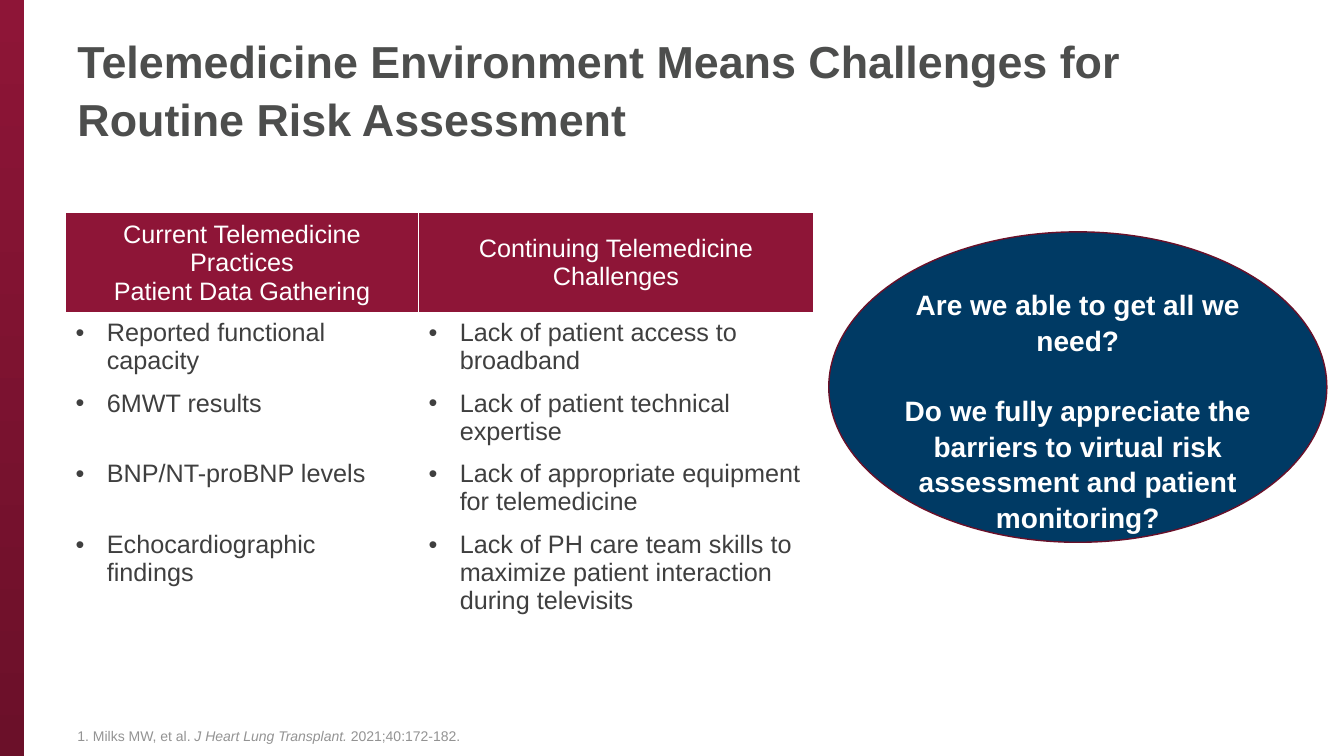
from dataclasses import dataclass

from lxml.etree import SubElement
from pptx import Presentation
from pptx.dml.color import RGBColor
from pptx.enum.shapes import MSO_SHAPE
from pptx.enum.text import MSO_ANCHOR, PP_ALIGN
from pptx.oxml.ns import qn
from pptx.util import Inches, Pt


@dataclass(frozen=True)
class Theme:
    font: str = "Arial"
    title_size: int = 32
    question_size: int = 20
    table_size: int = 18
    citation_size: int = 10
    line_spacing: float = 1.07
    maroon: str = "8E1537"
    dark_maroon: str = "6B1029"
    oval_line: str = "691029"
    navy: str = "003A64"
    white: str = "FFFFFF"
    title_gray: str = "4D4E4D"
    body_gray: str = "3F3F3F"
    citation_gray: str = "939393"


THEME = Theme()

TITLE = "Telemedicine Environment Means Challenges for Routine Risk Assessment"
HEADINGS = (
    "Current Telemedicine Practices\nPatient Data Gathering",
    "Continuing Telemedicine Challenges",
)
PRACTICES_AND_CHALLENGES = (
    ("Reported functional capacity", "Lack of patient access to broadband"),
    ("6MWT results", "Lack of patient technical expertise"),
    ("BNP/NT-proBNP levels", "Lack of appropriate equipment for telemedicine"),
    ("Echocardiographic findings",
     "Lack of PH care team skills to maximize patient interaction during televisits"),
)
COLUMN_WIDTHS = (3.5, 3.92)
ROW_HEIGHTS = (0.92, 0.66, 0.66, 0.66, 0.94)
QUESTIONS = (
    "Are we able to get all we need?\n"
    "Do we fully appreciate the barriers to virtual risk assessment and patient monitoring?"
)
CITATION = (
    ("1. Milks MW, et al.", False),
    (" J Heart Lung Transplant. ", True),
    ("2021;40:172-182.", False),
)


def rgb(color):
    return RGBColor.from_string(color)


def format_text(frame, size, color, bold=False, align=PP_ALIGN.LEFT, spacing=None):
    for paragraph in frame.paragraphs:
        paragraph.alignment = align
        paragraph.line_spacing = spacing
        for run in paragraph.runs:
            run.font.name = THEME.font
            run.font.size = Pt(size)
            run.font.bold = bold
            run.font.color.rgb = rgb(color)


def add_text_frame(slide, left, top, width, height, anchor):
    box = slide.shapes.add_textbox(
        Inches(left), Inches(top), Inches(width), Inches(height))
    frame = box.text_frame
    frame.word_wrap = True
    frame.vertical_anchor = anchor
    return frame


def add_side_band(slide):
    band = slide.shapes.add_shape(
        MSO_SHAPE.RECTANGLE, Inches(-0.01), 0, Inches(0.25), Inches(7.51))
    band.shadow.inherit = False
    band.line.fill.background()
    band.fill.gradient()
    band.fill.gradient_angle = 270
    for stop, color in zip(band.fill.gradient_stops, (THEME.maroon, THEME.dark_maroon)):
        stop.color.rgb = rgb(color)


def add_title(slide):
    frame = add_text_frame(slide, 0.67, 0.22, 11.75, 1.3, MSO_ANCHOR.MIDDLE)
    frame.text = TITLE
    format_text(frame, THEME.title_size, THEME.title_gray, bold=True,
                spacing=THEME.line_spacing)


def add_citation(slide):
    frame = add_text_frame(slide, 0.67, 6.95, 11.75, 0.48, MSO_ANCHOR.BOTTOM)
    for text, italic in CITATION:
        run = frame.paragraphs[0].add_run()
        run.text = text
        run.font.italic = italic
    format_text(frame, THEME.citation_size, THEME.citation_gray)


def set_borders(cell, bottom_width):
    properties = cell._tc.get_or_add_tcPr()
    for side, width in (("L", 1), ("R", 1), ("T", 1), ("B", bottom_width)):
        border = SubElement(properties, qn(f"a:ln{side}"), w=str(Pt(width)))
        fill = SubElement(border, qn("a:solidFill"))
        SubElement(fill, qn("a:srgbClr"), val=THEME.white)


def add_bullet(paragraph):
    properties = paragraph._p.get_or_add_pPr()
    indent = Inches(0.31)
    properties.set("marL", str(indent))
    properties.set("indent", str(-indent))
    SubElement(properties, qn("a:buFont"), typeface=THEME.font)
    SubElement(properties, qn("a:buChar"), char="•")


def fill_heading(cell, text):
    set_borders(cell, bottom_width=3)
    cell.fill.solid()
    cell.fill.fore_color.rgb = rgb(THEME.maroon)
    cell.vertical_anchor = MSO_ANCHOR.MIDDLE
    cell.text_frame.text = text
    format_text(cell.text_frame, THEME.table_size, THEME.white, align=PP_ALIGN.CENTER)


def fill_item(cell, text):
    set_borders(cell, bottom_width=1)
    cell.fill.background()
    cell.text_frame.text = text
    format_text(cell.text_frame, THEME.table_size, THEME.body_gray)
    add_bullet(cell.text_frame.paragraphs[0])


def add_practice_table(slide):
    table = slide.shapes.add_table(
        len(ROW_HEIGHTS), len(COLUMN_WIDTHS), Inches(0.65), Inches(2.11),
        Inches(sum(COLUMN_WIDTHS)), Inches(sum(ROW_HEIGHTS))).table
    table.horz_banding = False
    for column, width in zip(table.columns, COLUMN_WIDTHS):
        column.width = Inches(width)
    for row, height in zip(table.rows, ROW_HEIGHTS):
        row.height = Inches(height)
    for column, heading in enumerate(HEADINGS):
        fill_heading(table.cell(0, column), heading)
    for row, items in enumerate(PRACTICES_AND_CHALLENGES, start=1):
        for column, item in enumerate(items):
            fill_item(table.cell(row, column), item)


def add_question_oval(slide):
    oval = slide.shapes.add_shape(
        MSO_SHAPE.OVAL, Inches(8.22), Inches(2.3), Inches(4.94), Inches(3.08))
    oval.shadow.inherit = False
    oval.fill.solid()
    oval.fill.fore_color.rgb = rgb(THEME.navy)
    oval.line.color.rgb = rgb(THEME.oval_line)
    oval.line.width = Pt(1)

    frame = add_text_frame(slide, 8.62, 2.78, 4.14, 2.12, MSO_ANCHOR.TOP)
    frame.text = QUESTIONS
    format_text(frame, THEME.question_size, THEME.white, bold=True,
                align=PP_ALIGN.CENTER, spacing=THEME.line_spacing)
    frame.paragraphs[0].space_after = Pt(24)


def main():
    presentation = Presentation()
    presentation.slide_width = Inches(13.33)
    presentation.slide_height = Inches(7.5)
    slide = presentation.slides.add_slide(presentation.slide_layouts[6])
    add_side_band(slide)
    add_title(slide)
    add_citation(slide)
    add_practice_table(slide)
    add_question_oval(slide)
    presentation.save("out.pptx")


if __name__ == "__main__":
    main()
